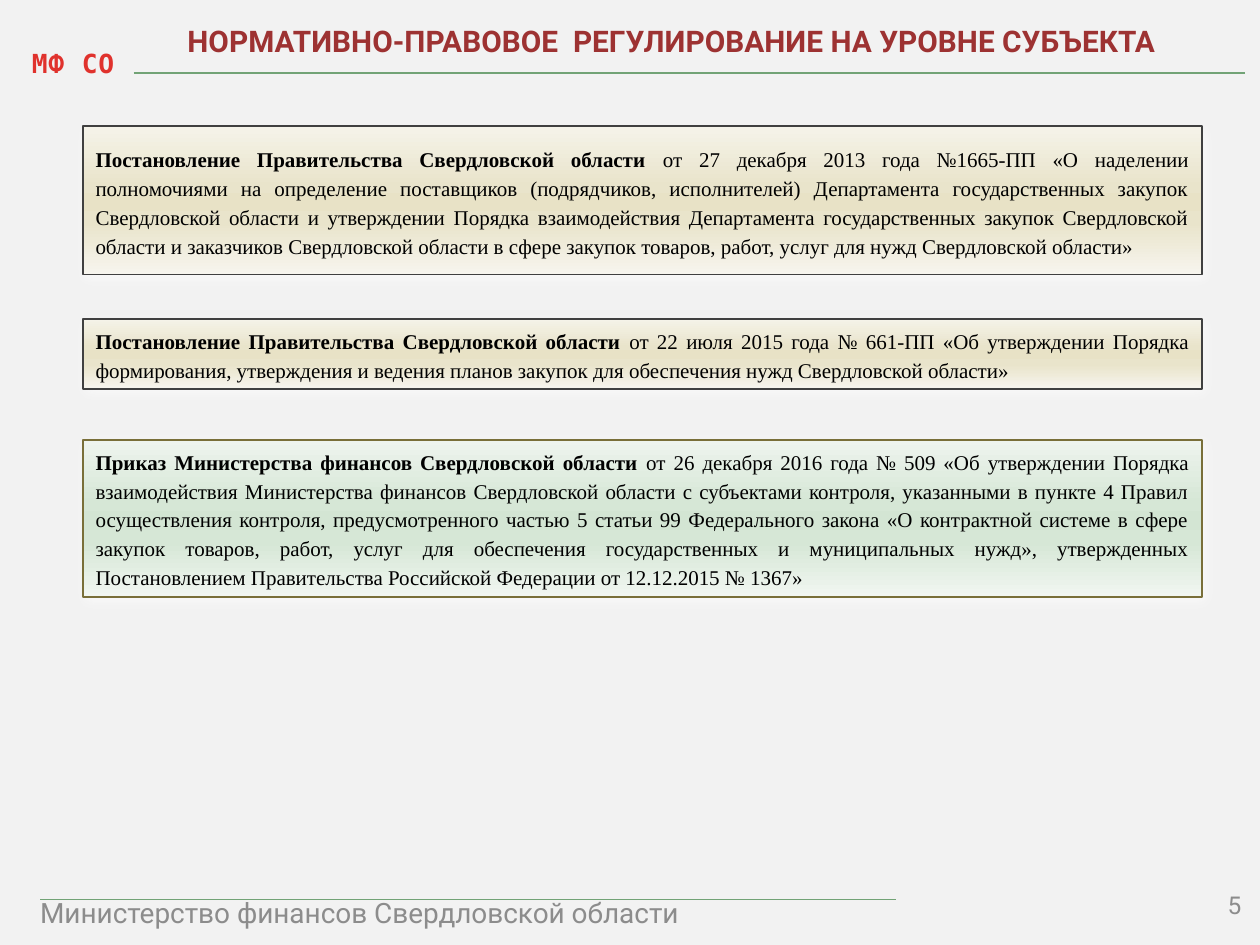
from lxml import etree
from pptx import Presentation
from pptx.dml.color import RGBColor
from pptx.enum.shapes import MSO_CONNECTOR as LINE, MSO_SHAPE as SHAPE
from pptx.enum.text import MSO_ANCHOR as ANCHOR, PP_ALIGN as ALIGN
from pptx.oxml import parse_xml
from pptx.oxml.ns import nsdecls, qn
from pptx.util import Inches, Pt

# Content
TITLE = "НОРМАТИВНО-ПРАВОВОЕ  РЕГУЛИРОВАНИЕ НА УРОВНЕ СУБЪЕКТА"
MARK = "МФ СО"
FOOTER = "Министерство финансов Свердловской области"
PAGE = "5"
SAND = ("F5F3E9", "E9E4CB", "E8E2C6", "E9E4CB", "F7F5EE")
MINT = ("EEF4EE", "D6E7D6", "D3E5D3", "D6E7D6", "F1F6F1")
STOPS = (0, 40, 50, 65, 100)
# Each act: top, height, anchor, line spacing, fill, border, bold lead, text
ACTS = [
    (1, 1.18, ANCHOR.MIDDLE, 1.15, SAND, "404040",
     "Постановление Правительства Свердловской области ",
     "от 27 декабря 2013 года №1665-ПП «О наделении полномочиями на "
     "определение поставщиков (подрядчиков, исполнителей) Департамента "
     "государственных закупок Свердловской области и утверждении Порядка "
     "взаимодействия Департамента государственных закупок Свердловской "
     "области и заказчиков Свердловской области в сфере закупок товаров, "
     "работ, услуг для нужд Свердловской области»"),
    (2.53, 0.56, ANCHOR.TOP, 1.14, SAND, "404040",
     "Постановление Правительства Свердловской области ",
     "от 22 июля 2015 года № 661-ПП «Об утверждении Порядка формирования, "
     "утверждения и ведения планов закупок для обеспечения нужд "
     "Свердловской области»"),
    (3.49, 1.25, ANCHOR.TOP, 1.14, MINT, "796F39",
     "Приказ Министерства финансов Свердловской области ",
     "от 26 декабря 2016 года № 509 «Об утверждении Порядка взаимодействия "
     "Министерства финансов Свердловской области с субъектами контроля, "
     "указанными в пункте 4 Правил осуществления контроля, "
     "предусмотренного частью 5 статьи 99 Федерального закона "
     "«О контрактной системе в сфере закупок товаров, работ, услуг для "
     "обеспечения государственных и муниципальных нужд», утвержденных "
     "Постановлением Правительства Российской Федерации от 12.12.2015 "
     "№ 1367»"),
]
RULES = [(1.06, 9.88, 0.58), (0.32, 7.11, 7.14)]  # left, right, height

deck = Presentation()
deck.slide_width, deck.slide_height = Inches(10), Inches(7.5)
slide = deck.slides.add_slide(deck.slide_layouts[6])


def rgb(code):
    return RGBColor.from_string(code)


def blend(pairs):
    """Vertical gradient fill from (percent, colour) pairs."""
    stops = "".join(
        f'<a:gs pos="{pos * 1000}"><a:srgbClr val="{code}"/></a:gs>'
        for pos, code in pairs)
    return parse_xml(f'<a:gradFill {nsdecls("a")}><a:gsLst>{stops}</a:gsLst>'
                     '<a:lin ang="5400000" scaled="0"/></a:gradFill>')


def add_run(para, text, size, face, color=None, bold=False):
    run = para.add_run()
    run.text = text
    font = run.font
    font.size, font.name, font.bold = Pt(size), face, bold
    if color:
        font.color.rgb = rgb(color)
    return run


def set_frame(shape, align, anchor=ANCHOR.TOP):
    frame = shape.text_frame
    frame.word_wrap = True
    frame.vertical_anchor = anchor
    para = frame.paragraphs[0]
    para.alignment = align
    return para


def add_label(place, align, anchor=ANCHOR.TOP):
    box = slide.shapes.add_textbox(*map(Inches, place))
    return set_frame(box, align, anchor)


def add_rule(left, right, top):
    rule = slide.shapes.add_connector(
        LINE.STRAIGHT, Inches(left), Inches(top), Inches(right), Inches(top))
    rule.line.color.rgb = rgb("72A376")
    rule.line.width = Pt(0.94)
    etree.SubElement(rule._element.spPr, qn("a:effectLst"))


def add_act(top, height, anchor, gap, fill, edge, lead, text):
    box = slide.shapes.add_shape(
        SHAPE.RECTANGLE, Inches(0.66), Inches(top), Inches(8.88), Inches(height))
    props = box._element.spPr
    props.insert(2, blend(zip(STOPS, fill)))
    box.line.color.rgb = rgb(edge)
    box.line.width = Pt(0.94)
    # Soft white halo
    props.append(parse_xml(
        f'<a:effectLst {nsdecls("a")}><a:outerShdw blurRad="{Pt(7)}" '
        f'dist="{Pt(1.5)}" dir="3600000" rotWithShape="0">'
        '<a:srgbClr val="FFFFFF"><a:alpha val="60000"/></a:srgbClr>'
        '</a:outerShdw></a:effectLst>'))
    para = set_frame(box, ALIGN.JUSTIFY, anchor)
    para.line_spacing = gap
    add_run(para, lead, 12, "Times New Roman", "000000", True)
    add_run(para, text, 12, "Times New Roman", "000000")


# Background and rules
back = slide.background.fill
back.solid()
back.fore_color.rgb = rgb("F2F2F2")
for rule in RULES:
    add_rule(*rule)

# Ministry mark
para = add_label((-0.06, 0.29, 1.28, 0.39), ALIGN.CENTER)
para.line_spacing = 1.15
para.space_after = Pt(10.4)
mark = add_run(para, MARK, 15, "DejaVu Sans Mono", bold=True)
props = mark.font._element
props.set("spc", "50")
props.insert(0, blend([(25, "E0322D"), (100, "A2201C")]))

# Title, footer and page number
add_run(add_label((1.12, 0.13, 8.42, 0.39), ALIGN.CENTER),
        TITLE, 17, "Roboto", "9D3232", True)
add_run(add_label((0.22, 7.06, 7.18, 0.37), ALIGN.LEFT),
        FOOTER, 16, "Roboto", "8C8C8C")
add_run(add_label((9.34, 6.95, 0.61, 0.4), ALIGN.RIGHT, ANCHOR.BOTTOM),
        PAGE, 14, "Roboto", "8C8C8C")

# Legal acts
for act in ACTS:
    add_act(*act)

deck.save("out.pptx")
